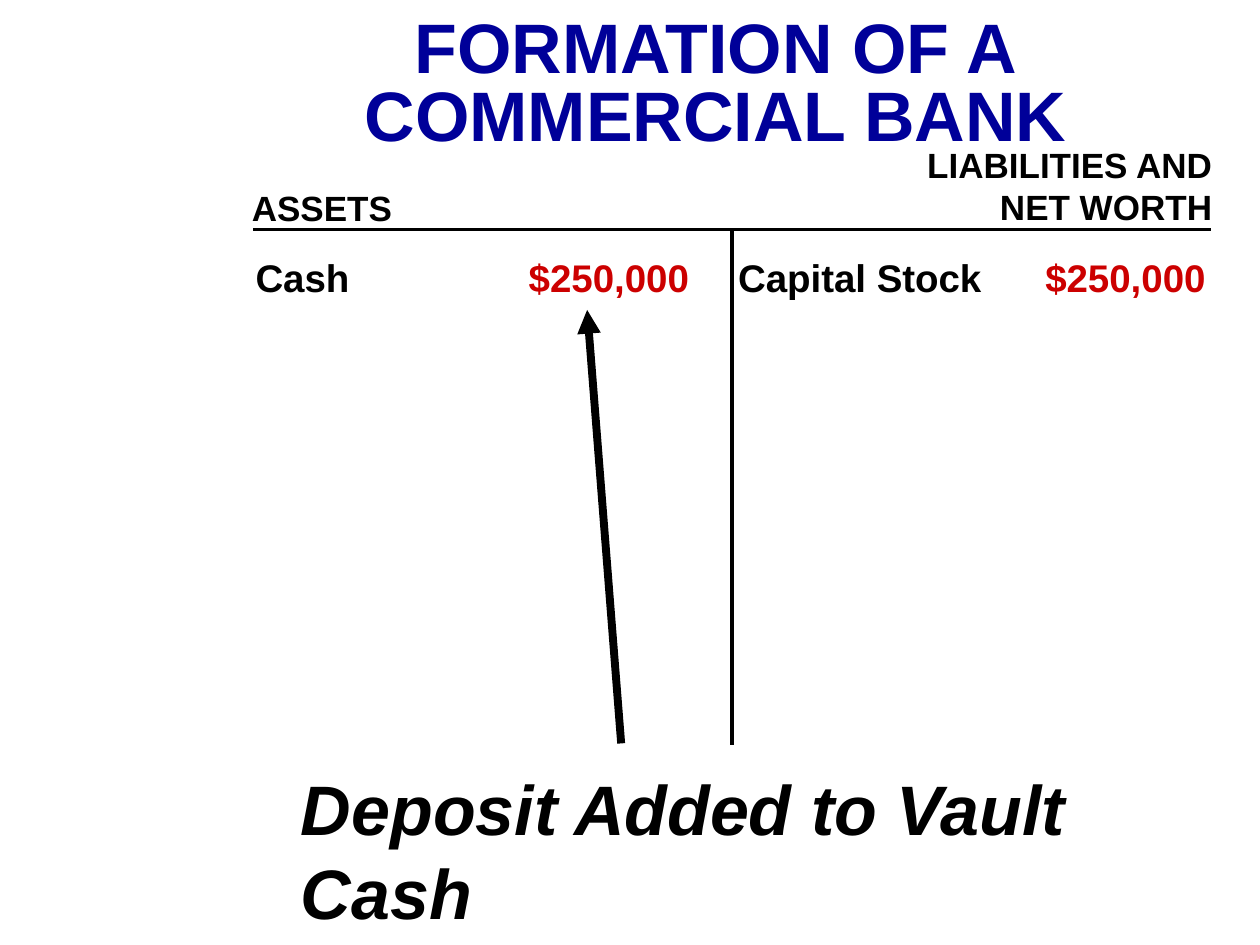
from lxml import etree
from pptx import Presentation
from pptx.dml.color import RGBColor
from pptx.enum.shapes import MSO_CONNECTOR
from pptx.enum.text import MSO_ANCHOR, MSO_AUTO_SIZE, PP_ALIGN
from pptx.oxml.ns import qn
from pptx.util import Inches, Pt

STRAIGHT = MSO_CONNECTOR.STRAIGHT
TOP = MSO_ANCHOR.TOP
NO_AUTOFIT = MSO_AUTO_SIZE.NONE
LEFT = PP_ALIGN.LEFT
CENTER = PP_ALIGN.CENTER
RIGHT = PP_ALIGN.RIGHT

FONT = "Arial"
BLACK = "000000"
BLUE = "000099"
RED = "CC0000"


def rgb(hex_color):
    return RGBColor.from_string(hex_color)


def format_run(run, size, color=BLACK, italic=False):
    run.font.name = FONT
    run.font.size = Pt(size)
    run.font.bold = True
    run.font.italic = italic
    run.font.color.rgb = rgb(color)


def fill_text(shape, text, size, color=BLACK, alignment=LEFT, italic=False, spacing=None):
    text_frame = shape.text_frame
    text_frame.word_wrap = True
    text_frame.auto_size = NO_AUTOFIT
    text_frame.vertical_anchor = TOP
    text_frame.text = text
    for paragraph in text_frame.paragraphs:
        paragraph.alignment = alignment
        paragraph.line_spacing = spacing
        for run in paragraph.runs:
            format_run(run, size, color, italic)


def set_title(slide, text, left, top, width, height):
    title = slide.shapes.title
    title.left, title.top = Inches(left), Inches(top)
    title.width, title.height = Inches(width), Inches(height)
    fill_text(title, text, 40, BLUE, CENTER, spacing=0.8)


def add_text(slide, text, left, top, width, height, size, **style):
    box = slide.shapes.add_textbox(Inches(left), Inches(top), Inches(width), Inches(height))
    fill_text(box, text, size, **style)
    return box


def add_entry(slide, label, amount, left, width, amount_right):
    box = add_text(slide, f"{label}\t", left, 1.97, width, 0.46, 22)
    paragraph = box.text_frame.paragraphs[0]
    run = paragraph.add_run()
    run.text = amount
    format_run(run, 22, RED)
    properties = paragraph._p.get_or_add_pPr()
    tab_list = etree.SubElement(properties, qn("a:tabLst"))
    etree.SubElement(tab_list, qn("a:tab"), pos=str(Inches(amount_right)), algn="r")


def add_line(slide, start, end, width, arrow=False):
    points = [Inches(value) for value in (*start, *end)]
    connector = slide.shapes.add_connector(STRAIGHT, *points)
    connector.line.color.rgb = rgb(BLACK)
    connector.line.width = Pt(width)
    if arrow:
        etree.SubElement(connector.line._get_or_add_ln(), qn("a:tailEnd"), type="triangle")
    etree.SubElement(connector._element.spPr, qn("a:effectLst"))


def main():
    presentation = Presentation()
    presentation.slide_width = Inches(10)
    presentation.slide_height = Inches(7.5)
    slide = presentation.slides.add_slide(presentation.slide_layouts[5])

    add_line(slide, (2.01, 1.82), (9.61, 1.82), 2)
    add_line(slide, (5.81, 1.82), (5.81, 5.91), 2)
    add_entry(slide, "Cash", "$250,000", 1.93, 3.64, 3.44)
    add_entry(slide, "Capital Stock", "$250,000", 5.76, 3.92, 3.71)
    set_title(slide, "FORMATION OF A\nCOMMERCIAL BANK", 2.69, 0.11, 5.98, 1.16)
    add_text(slide, "ASSETS", 1.9, 1.43, 1.5, 0.43, 20)
    add_text(slide, "LIABILITIES AND\nNET WORTH", 7.12, 1.09, 2.6, 0.76, 20, alignment=RIGHT)
    add_text(slide, "Deposit Added to Vault Cash", 2.29, 6.03, 6.81, 0.77, 40, italic=True)
    add_line(slide, (4.93, 5.9), (4.66, 2.46), 4.5, arrow=True)

    presentation.save("out.pptx")


if __name__ == "__main__":
    main()
